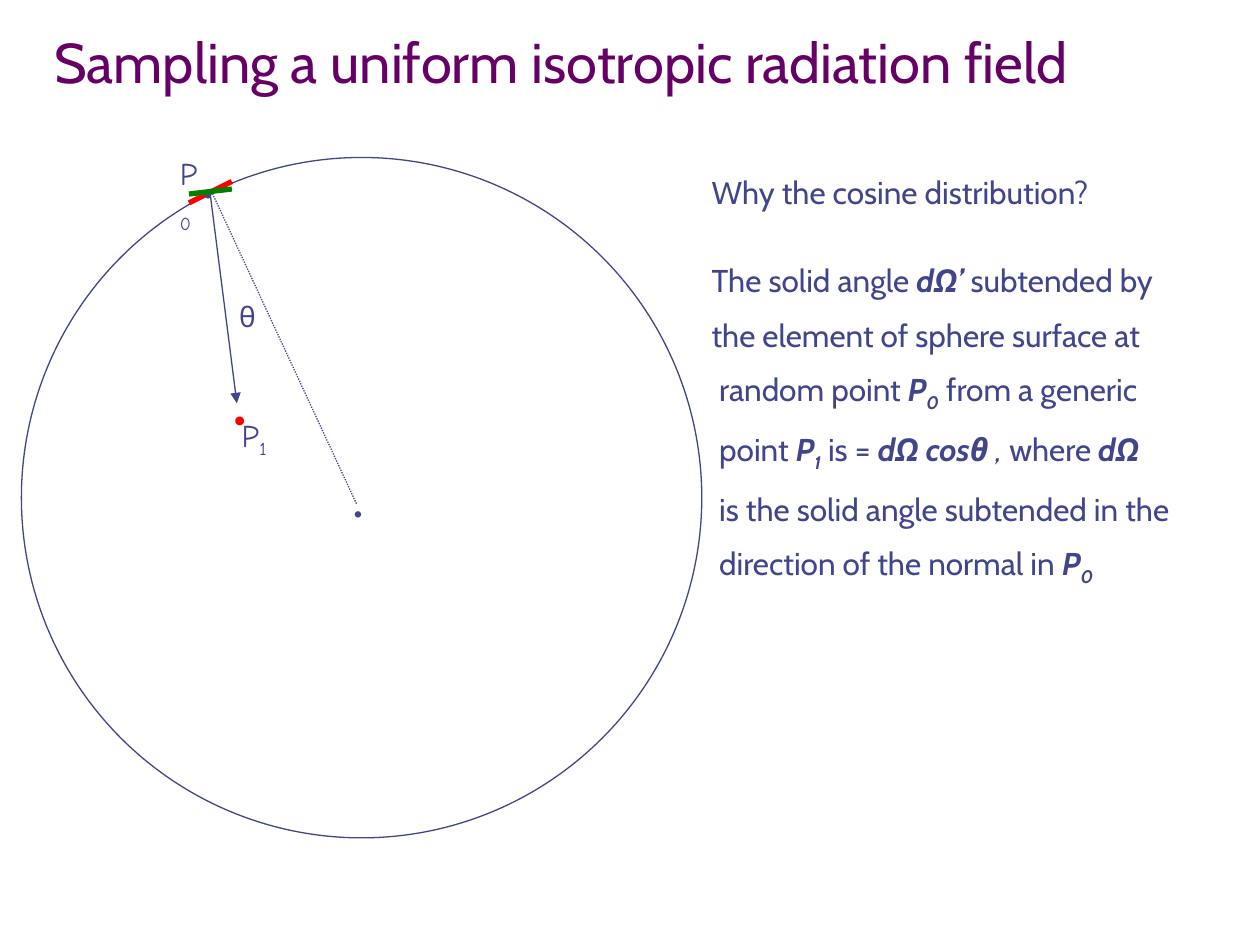
import pptx
import pptx.dml.color
import pptx.enum.dml
import pptx.enum.shapes
import pptx.enum.text
import pptx.oxml
import pptx.util
from pptx.util import Inches

BLUE, PURPLE, RED, GREEN = "40458C", "660066", "FF0000", "008000"
BODY_FONT, LABEL_FONT = "Cabin", "Comic Neue"
BOLD, ITALIC, SUB = "b", "i", "s"

# Each line of the explanation: left indent, space before, space after, runs
EXPLANATION = [
    (0, 0, 0, [("Why the cosine distribution?", "")]),
    (0, 29, 6, [("The solid angle ", ""), ("dΩ’", "bi"), (" subtended by", "")]),
    (0, 3.6, 6, [("the element of sphere surface at", "")]),
    (0.06, 3.6, 6, [("random point ", ""), ("P", "bi"), ("0", "bis"),
                    (" from a generic", "")]),
    (0.06, 3.6, 6, [("point ", ""), ("P", "bi"), ("1", "bis"), (" is = ", ""),
                    ("dΩ cosθ ", "bi"), (", ", "i"), ("where ", ""), ("dΩ", "bi")]),
    (0.06, 3.6, 6, [("is the solid angle subtended in the", "")]),
    (0.06, 3.6, 6, [("direction of the normal in ", ""), ("P", "bi"), ("0", "bis")]),
]


def rgb(color):
    return pptx.dml.color.RGBColor.from_string(color)


def add_run(p, text, size, font, color, style=""):
    r = p.add_run()
    r.text = text
    r.font.size = pptx.util.Pt(size)
    r.font.name = font
    r.font.color.rgb = rgb(color)
    r.font.bold = BOLD in style
    r.font.italic = ITALIC in style
    if SUB in style:
        r._r.get_or_add_rPr().set("baseline", "-25000")


def add_text_box(s, left, top, width, height):
    box = s.shapes.add_textbox(Inches(left), Inches(top), Inches(width), Inches(height))
    box.text_frame.word_wrap = True
    return box.text_frame


def add_label(s, left, top, width, height, text, size, color=BLUE, sub=""):
    p = add_text_box(s, left, top, width, height).paragraphs[0]
    add_run(p, text, size, LABEL_FONT, color)
    if sub:
        add_run(p, sub, size, LABEL_FONT, color, SUB)


def add_line(s, start, end, color=BLUE, width=0.75, dash=None, arrow=False):
    line = s.shapes.add_connector(
        pptx.enum.shapes.MSO_CONNECTOR.STRAIGHT,
        *(Inches(v) for v in (*start, *end)))
    line.line.color.rgb = rgb(color)
    line.line.width = pptx.util.Pt(width)
    if dash:
        line.line.dash_style = dash
    if arrow:
        tail = pptx.oxml.parse_xml(
            '<a:tailEnd xmlns:a="http://schemas.openxmlformats.org/drawingml/2006/main"'
            ' type="triangle"/>')
        line.line._get_or_add_ln().append(tail)
    line._element.spPr.append(pptx.oxml.xmlchemy.OxmlElement("a:effectLst"))


def add_title(s, left, top, width, height):
    title = s.shapes.title
    title.left, title.top = Inches(left), Inches(top)
    title.width, title.height = Inches(width), Inches(height)
    tf = title.text_frame
    tf.vertical_anchor = pptx.enum.text.MSO_ANCHOR.TOP
    p = tf.paragraphs[0]
    p.alignment = pptx.enum.text.PP_ALIGN.LEFT
    add_run(p, "Sampling a uniform isotropic radiation field", 32, BODY_FONT, PURPLE)


def add_explanation(s, left, top, width, height):
    tf = add_text_box(s, left, top, width, height)
    for i, (indent, before, after, runs) in enumerate(EXPLANATION):
        p = tf.add_paragraph() if i else tf.paragraphs[0]
        p._p.get_or_add_pPr().set("marL", str(Inches(indent)))
        p.space_before = pptx.util.Pt(before)
        p.space_after = pptx.util.Pt(after)
        for text, style in runs:
            add_run(p, text, 18, BODY_FONT, BLUE, style)


def add_sphere(s, left, top, size):
    """Sphere section with a ray from P0 to P1 and the normal to the centre."""
    def at(x, y):
        return left + x, top + y

    sphere = s.shapes.add_shape(
        pptx.enum.shapes.MSO_SHAPE.OVAL,
        Inches(left), Inches(top), Inches(size), Inches(size))
    sphere.shadow.inherit = False
    sphere.fill.background()
    sphere.line.color.rgb = rgb(BLUE)
    sphere.line.width = pptx.util.Pt(0.75)

    add_line(s, at(1.5, 0.3), at(1.71, 1.95), arrow=True)
    add_line(s, at(1.5, 0.25), at(2.66, 2.75),
             dash=pptx.enum.dml.MSO_LINE.ROUND_DOT)
    add_line(s, at(1.33, 0.36), at(1.67, 0.19), RED, 3)

    add_label(s, *at(1.63, 1.08), 0.5, 0.37, "θ", 16)
    add_label(s, *at(1.65, 2), 0.58, 0.33, "P", 18, sub="1")
    add_label(s, *at(1.16, -0.08), 0.4, 0.33, "P", 18, sub="0")
    add_label(s, *at(2.53, 2.58), 0.42, 0.43, "•", 20)
    add_label(s, *at(1.58, 1.75), 0.42, 0.57, "•", 28, RED)
    add_label(s, *at(1.34, 0.05), 0.42, 0.43, "•", 20)

    add_line(s, at(1.33, 0.29), at(1.67, 0.25), GREEN, 3)


def main():
    prs = pptx.Presentation()
    prs.slide_width, prs.slide_height = Inches(10), Inches(7.5)
    s = prs.slides.add_slide(prs.slide_layouts[5])
    add_title(s, 0.33, 0.17, 9.42, 0.83)
    add_explanation(s, 5.55, 1.32, 4.33, 4.95)
    add_sphere(s, 0.17, 1.25, 5.4)
    prs.save("out.pptx")


if __name__ == "__main__":
    main()
